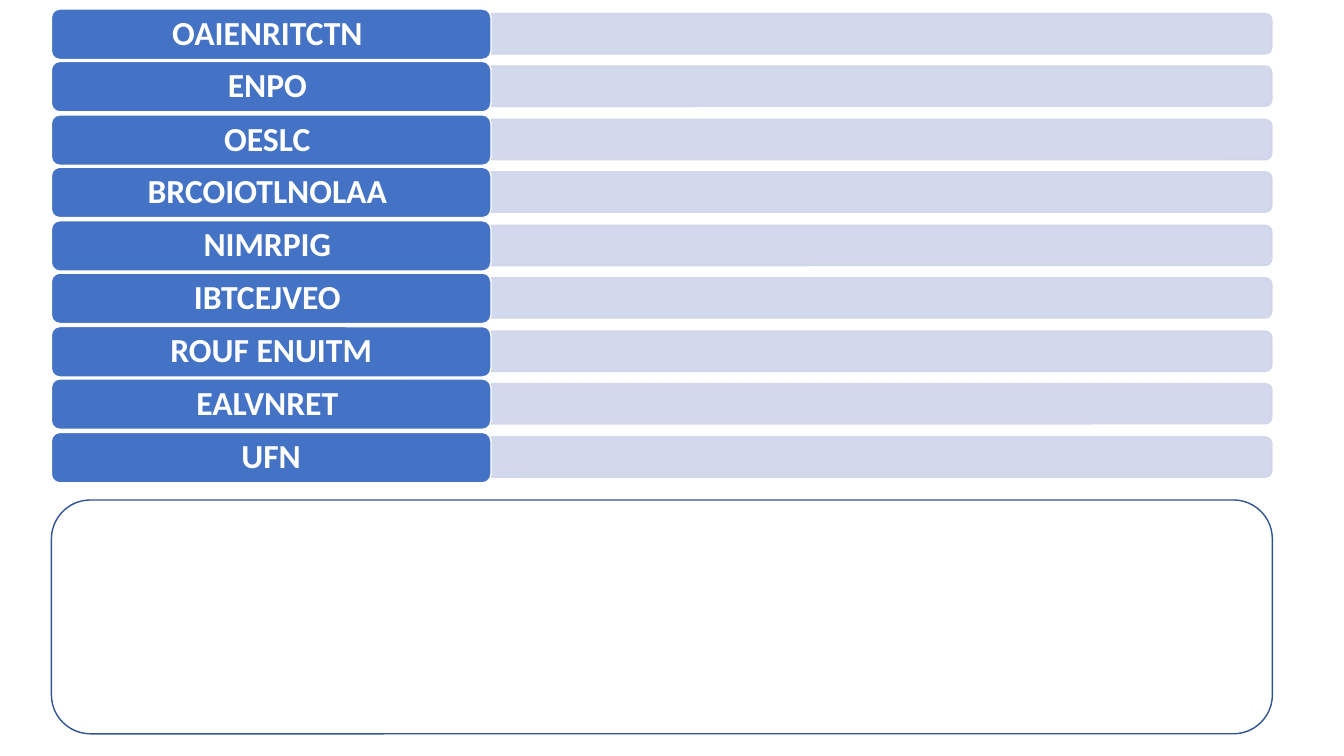
from pptx import Presentation
from pptx import util as u
from pptx.dml.color import RGBColor
from pptx.enum import shapes, text
from pptx.oxml.ns import qn
from lxml import etree

PX = 9144
BLUE = RGBColor(0x44, 0x72, 0xC4)
PALE = RGBColor(0xCF, 0xD5, 0xEA)
NAVY = RGBColor(0x32, 0x54, 0x91)
WHITE = RGBColor(0xFF, 0xFF, 0xFF)

LEFT = 51
TOP = 9
PITCH = 52.5
WORDS = [
    "OAIENRITCTN ", "ENPO ", "OESLC ", "BRCOIOTLNOLAA ", "NIMRPIG ",
    "IBTCEJVEO ", "ROUF ENUITM", "EALVNRET ", "UFN",
]


def add_box(slide, kind, left, top, width, height, fill, line):
    box = slide.shapes.add_shape(
        kind, left * PX, top * PX, width * PX, height * PX)
    box.shadow.inherit = False
    box.fill.solid()
    box.fill.fore_color.rgb = fill
    box.line.color.rgb = line
    box.line.width = u.Pt(1)
    return box


def add_bar(slide, top):
    bar = add_box(slide, shapes.MSO_SHAPE.ROUND_2_SAME_RECTANGLE,
                  854, top - 363, 40, 775, PALE, PALE)
    bar.rotation = 90
    for color in bar._element.spPr.iter(qn("a:srgbClr")):
        etree.SubElement(color, qn("a:alpha"), val="90000")


def add_label(slide, top, word):
    label = add_box(slide, shapes.MSO_SHAPE.ROUNDED_RECTANGLE,
                    LEFT, top, 436, 50, BLUE, WHITE)
    frame = label.text_frame
    frame.text = word
    frame.word_wrap = True
    frame.margin_top = frame.margin_bottom = 0
    frame.vertical_anchor = text.MSO_ANCHOR.MIDDLE
    para = frame.paragraphs[0]
    para.alignment = text.PP_ALIGN.CENTER
    para.line_spacing = 0.9
    para.font.name = "Calibri"
    para.font.size = u.Pt(24)
    para.font.bold = True
    para.font.color.rgb = WHITE


def main():
    deck = Presentation()
    deck.slide_width = 1333 * PX
    deck.slide_height = 750 * PX
    slide = deck.slides.add_slide(deck.slide_layouts[6])
    for row, word in enumerate(WORDS):
        top = int(TOP + row * PITCH)
        add_bar(slide, top)
        add_label(slide, top, word)
    add_box(slide, shapes.MSO_SHAPE.ROUNDED_RECTANGLE,
            LEFT, 496, 1211, 232, WHITE, NAVY)
    deck.save("out.pptx")


if __name__ == "__main__":
    main()
